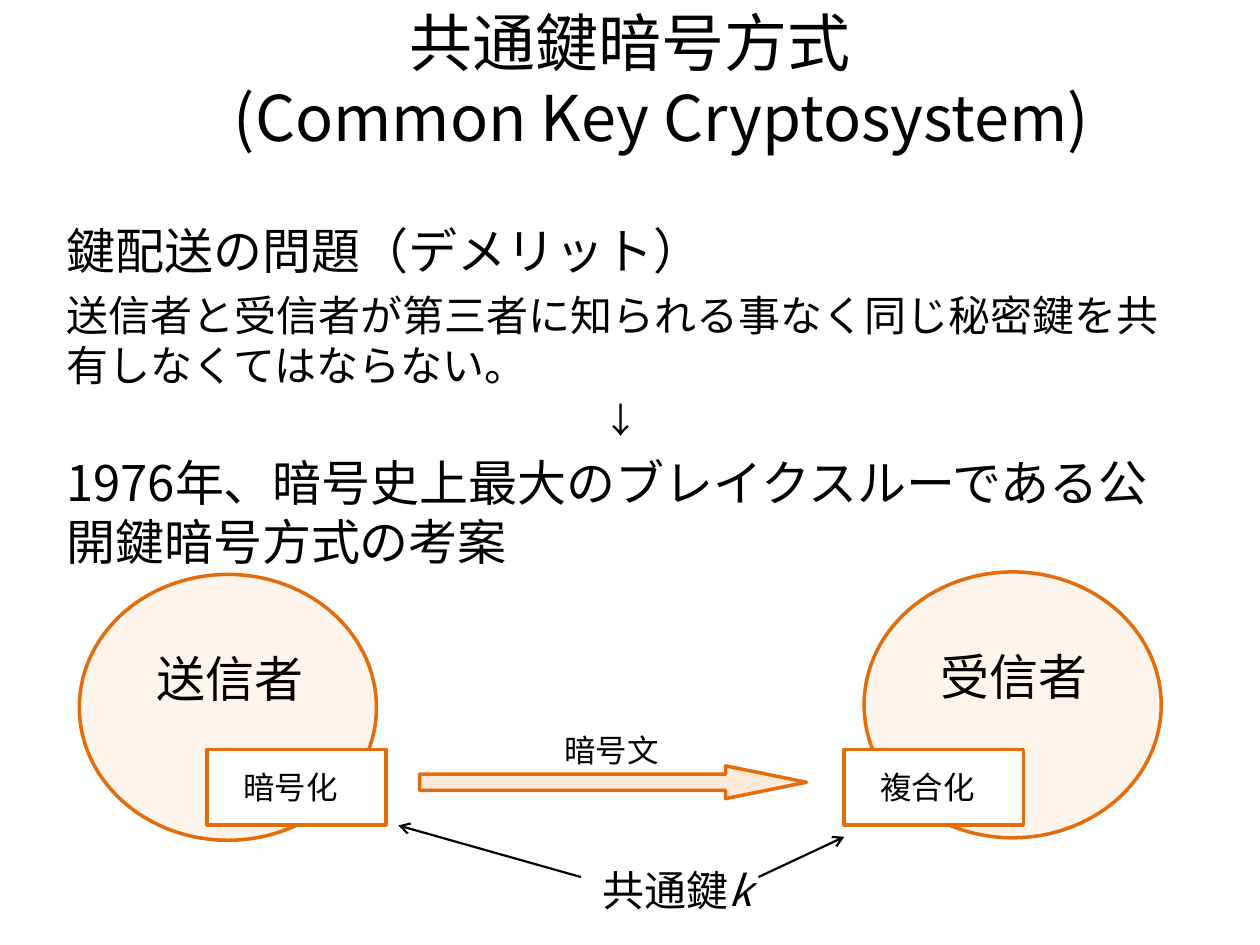
from dataclasses import dataclass

from lxml.etree import SubElement
from pptx import Presentation
from pptx.dml.color import RGBColor
from pptx.enum.shapes import MSO_CONNECTOR, MSO_SHAPE
from pptx.enum.text import MSO_ANCHOR, MSO_AUTO_SIZE, PP_ALIGN
from pptx.oxml.ns import qn
from pptx.util import Cm, Pt


@dataclass(frozen=True)
class Theme:
    font: str = "Noto Sans CJK JP"
    ink: str = "000000"
    edge: str = "E46C0A"
    tint: str = "FDEADA"
    paper: str = "FFFFFF"
    title: int = 36
    head: int = 28
    text: int = 24
    mark: int = 20
    small: int = 18
    border: float = 2
    thin: float = 1.25


THEME = Theme()


def rgb(code):
    return RGBColor.from_string(code)


def paint(shape, color):
    shape.fill.solid()
    shape.fill.fore_color.rgb = rgb(color)


def add_run(para, text, size, italic=None):
    run = para.add_run()
    run.text = text
    font = run.font
    font.name, font.size, font.italic = THEME.font, Pt(size), italic
    font.color.rgb = rgb(THEME.ink)
    SubElement(font._element, qn("a:ea"), typeface=THEME.font)


def add_title(slide, lines):
    title = slide.shapes.title
    title.left, title.top = Cm(1.27), Cm(0.76)
    title.width, title.height = Cm(22.86), Cm(3.18)
    frame = title.text_frame
    frame.auto_size = MSO_AUTO_SIZE.NONE
    frame.vertical_anchor = MSO_ANCHOR.MIDDLE
    frame.margin_bottom = Cm(1.65)
    para = frame.paragraphs[0]
    para.alignment = PP_ALIGN.CENTER
    for i, line in enumerate(lines):
        if i:
            para.add_line_break()
        add_run(para, line, THEME.title)


def add_box(slide, x, y, w, h):
    box = slide.shapes.add_textbox(Cm(x), Cm(y), Cm(w), Cm(h))
    box.text_frame.word_wrap = True
    return box


def add_label(slide, text, size, x, y, w, h, fill=None):
    box = add_box(slide, x, y, w, h)
    if fill:
        paint(box, fill)
    add_run(box.text_frame.paragraphs[0], text, size)


def add_body(slide, items):
    frame = add_box(slide, 1.09, 4.32, 22.86, 8.13).text_frame
    for i, (text, size, align) in enumerate(items):
        para = frame.add_paragraph() if i else frame.paragraphs[0]
        para.alignment = align
        para.space_before = Pt(round(size * 0.24, 1))
        add_run(para, text, size)


def add_form(slide, kind, fill, x, y, w, h):
    shape = slide.shapes.add_shape(kind, Cm(x), Cm(y), Cm(w), Cm(h))
    shape.shadow.inherit = False
    paint(shape, fill)
    shape.line.color.rgb = rgb(THEME.edge)
    shape.line.width = Pt(THEME.border)
    return shape


def add_party(slide, name, x, y):
    disc = add_form(slide, MSO_SHAPE.OVAL, THEME.tint, x, y, 5.99, 5.36)
    color = disc.fill._xPr.find(qn("a:solidFill"))[0]
    SubElement(color, qn("a:alpha"), val="50000")
    add_label(slide, name, THEME.head, x + 1.3, y + 1.37, 3.78, 1.45)


def add_step(slide, name, x, y):
    add_form(slide, MSO_SHAPE.RECTANGLE, THEME.paper, x, y, 3.61, 1.52)
    add_label(slide, name, THEME.small, x + 0.48, y + 0.25, 2.62, 1.02, THEME.paper)


def add_flow(slide, name):
    arrow = add_form(slide, MSO_SHAPE.RIGHT_ARROW, THEME.tint, 8.46, 15.44, 7.8, 0.66)
    arrow.adjustments[1] = 2.47
    add_label(slide, name, THEME.small, 11.13, 14.61, 2.62, 1.02)


def add_arrow(slide, start, end):
    ends = [Cm(n) for n in (*start, *end)]
    link = slide.shapes.add_connector(MSO_CONNECTOR.STRAIGHT, *ends)
    link.line.color.rgb = rgb(THEME.ink)
    link.line.width = Pt(THEME.thin)
    SubElement(link.line._get_or_add_ln(), qn("a:tailEnd"), type="arrow")
    SubElement(link._element.spPr, qn("a:effectLst"))


def add_key(slide):
    frame = add_box(slide, 9.35, 17.3, 6.32, 1.27).text_frame
    frame.margin_left = Cm(2.79)
    para = frame.paragraphs[0]
    add_run(para, "共通鍵", THEME.text)
    add_run(para, "k", THEME.text, True)
    add_arrow(slide, (11.71, 17.68), (8.03, 16.64))
    add_arrow(slide, (15.29, 17.68), (17.02, 16.87))


def main():
    deck = Presentation()
    deck.slide_width, deck.slide_height = Cm(25.4), Cm(19.05)
    slide = deck.slides.add_slide(deck.slide_layouts[5])
    add_title(slide, ["共通鍵暗号方式", "　(Common Key Cryptosystem)"])
    add_party(slide, "送信者", 1.6, 11.58)
    add_party(slide, "受信者", 17.42, 11.53)
    add_step(slide, "暗号化", 4.17, 15.11)
    add_step(slide, "複合化", 17.02, 15.11)
    add_flow(slide, "暗号文")
    add_key(slide)
    left, mid = PP_ALIGN.LEFT, PP_ALIGN.CENTER
    add_body(slide, [
        ("鍵配送の問題（デメリット）", THEME.head, left),
        ("送信者と受信者が第三者に知られる事なく同じ秘密鍵を共有しなくてはならない。", THEME.text, left),
        ("↓", THEME.mark, mid),
        ("1976年、暗号史上最大のブレイクスルーである公開鍵暗号方式の考案", THEME.head, left),
    ])
    deck.save("out.pptx")


if __name__ == "__main__":
    main()
